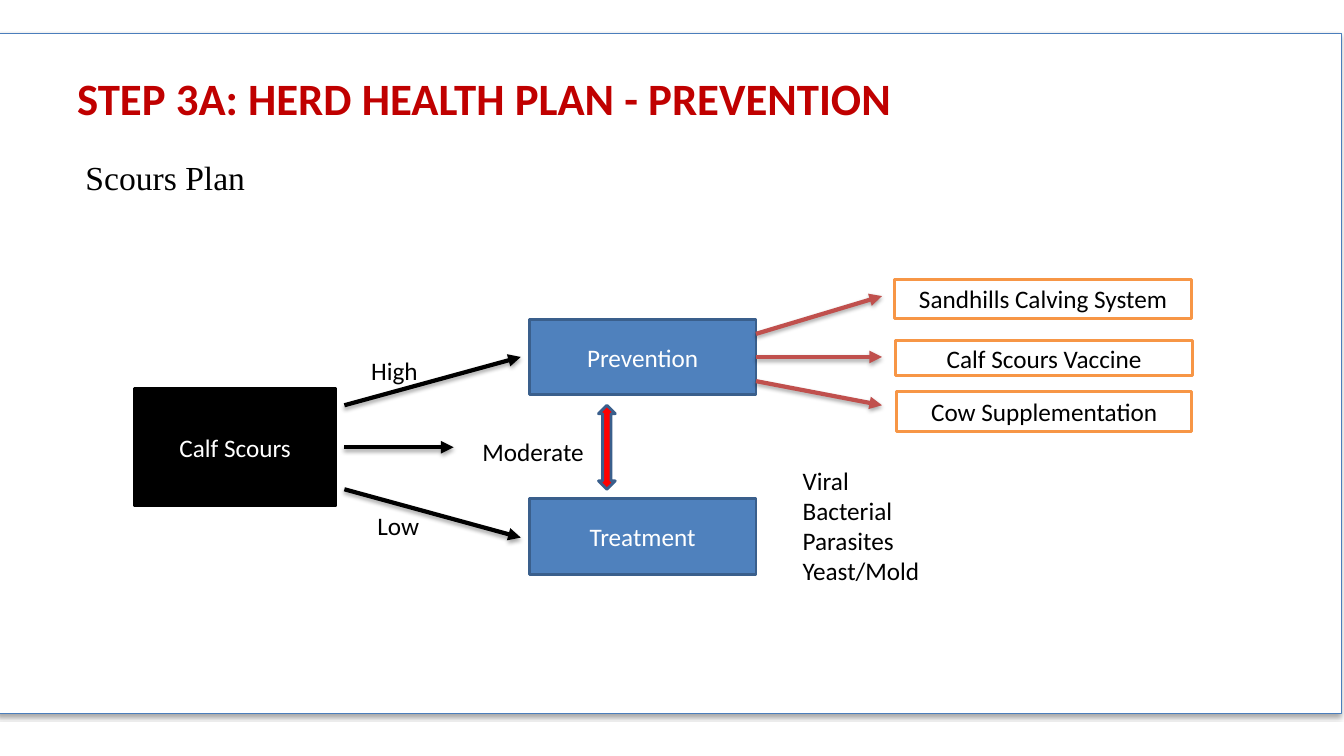
from lxml.etree import SubElement
from pptx import Presentation
from pptx.dml.color import RGBColor
from pptx.enum.shapes import MSO_CONNECTOR, MSO_SHAPE
from pptx.enum.text import MSO_ANCHOR, PP_ALIGN
from pptx.oxml.ns import qn
from pptx.util import Pt

PX = 9525  # EMU per px, 96 px to the inch
BLACK, WHITE, RED = "000000", "FFFFFF", "C00000"
BLUE, NAVY, ORANGE, BRICK = "4F81BD", "3A5F8C", "F79646", "C0504D"


def px(*lengths):
    return [length * PX for length in lengths]


def rgb(color):
    return RGBColor.from_string(color)


def add_soft_shadow(props):
    effects = props.find(qn("a:effectLst"))
    if effects is None:
        effects = SubElement(props, qn("a:effectLst"))
    shadow = SubElement(effects, qn("a:outerShdw"), blurRad="40000",
                        dist="23000", dir="5400000", rotWithShape="0")
    tint = SubElement(shadow, qn("a:srgbClr"), val=BLACK)
    SubElement(tint, qn("a:alpha"), val="35000")


def add_block(slide, box, fill, line, weight=2, kind=MSO_SHAPE.RECTANGLE):
    block = slide.shapes.add_shape(kind, *px(*box))
    block.shadow.inherit = False
    block.fill.solid()
    block.fill.fore_color.rgb = rgb(fill)
    block.line.color.rgb = rgb(line)
    block.line.width = Pt(weight)
    return block


def write(frame, lines, color=BLACK, size=18, font="Calibri",
          bold=False, align=PP_ALIGN.LEFT):
    frame.word_wrap = True
    frame.text = "\n".join(lines)
    for paragraph in frame.paragraphs:
        paragraph.alignment = align
        paragraph.font.name = font
        paragraph.font.size = Pt(size)
        paragraph.font.bold = bold
        paragraph.font.color.rgb = rgb(color)


def add_node(slide, box, text, fill, line, color):
    frame = add_block(slide, box, fill, line).text_frame
    frame.vertical_anchor = MSO_ANCHOR.MIDDLE
    write(frame, [text], color, align=PP_ALIGN.CENTER)


def add_label(slide, box, *lines, **style):
    frame = slide.shapes.add_textbox(*px(*box)).text_frame
    write(frame, lines, **style)


def add_arrow(slide, start, end, color):
    arrow = slide.shapes.add_connector(
        MSO_CONNECTOR.STRAIGHT, *px(*start, *end))
    arrow.line.color.rgb = rgb(color)
    arrow.line.width = Pt(3)
    props = arrow._element.spPr
    SubElement(props.find(qn("a:ln")), qn("a:tailEnd"), type="triangle")
    add_soft_shadow(props)


def add_card(slide, box):
    card = add_block(slide, box, WHITE, "4B7EBC", 0.75)
    add_soft_shadow(card._element.spPr)


def add_heading(slide, left, top):
    add_label(slide, (left, top, 1152, 70),
              "STEP 3A: HERD HEALTH PLAN - PREVENTION",
              color=RED, size=32, bold=True)


def add_topic(slide, box):
    frame = slide.shapes.add_textbox(*px(*box)).text_frame
    indent = 36 * PX
    props = frame.paragraphs[0]._p.get_or_add_pPr()
    props.set("marL", str(indent))
    props.set("indent", str(-indent))
    SubElement(props, qn("a:buFont"), typeface="Arial")
    SubElement(props, qn("a:buChar"), char="•")
    write(frame, ["Scours Plan"], size=24, font="Times New Roman")


def add_scours_flow(slide, left, top):
    def at(x, y, *size):
        return (left + x, top + y, *size)

    add_node(slide, at(0, 104, 192, 112), "Calf Scours", BLACK, BLACK, WHITE)
    for response, y in (("Prevention", 38), ("Treatment", 209)):
        add_node(slide, at(376, y, 216, 72), response, BLUE, NAVY, WHITE)

    measures = (("Sandhills Calving System", (724, 0, 283, 37)),
                ("Calf Scours Vaccine", (725, 58, 283, 34)),
                ("Cow Supplementation", (726, 107, 281, 38)))
    for measure, box in measures:
        add_node(slide, at(*box), measure, WHITE, ORANGE, BLACK)

    for y, end in ((120, (368, 74)), (160, (304, 160)), (200, (368, 246))):
        add_arrow(slide, at(200, y), at(*end), BLACK)
    for y, end_y in ((52, 16), (74, 74), (97, 120)):
        add_arrow(slide, at(592, y), at(712, end_y), BRICK)
    add_block(slide, at(442, 120, 16, 80), "FF0000", NAVY,
              kind=MSO_SHAPE.UP_DOWN_ARROW)

    add_label(slide, at(216, 68, 88, 38), "High")
    add_label(slide, at(222, 215, 88, 38), "Low")
    add_label(slide, at(322, 145, 158, 38), "Moderate")
    add_label(slide, at(627, 172, 264, 126),
              "Viral", "Bacterial", "Parasites", "Yeast/Mold")


def main():
    deck = Presentation()
    deck.slide_width, deck.slide_height = px(1280, 720)
    slide = deck.slides.add_slide(deck.slide_layouts[6])
    add_card(slide, (-2, 32, 1280, 648))
    add_heading(slide, 64, 63)
    add_topic(slide, (72, 145, 1056, 487))
    add_scours_flow(slide, 128, 266)
    deck.save("out.pptx")


if __name__ == "__main__":
    main()
